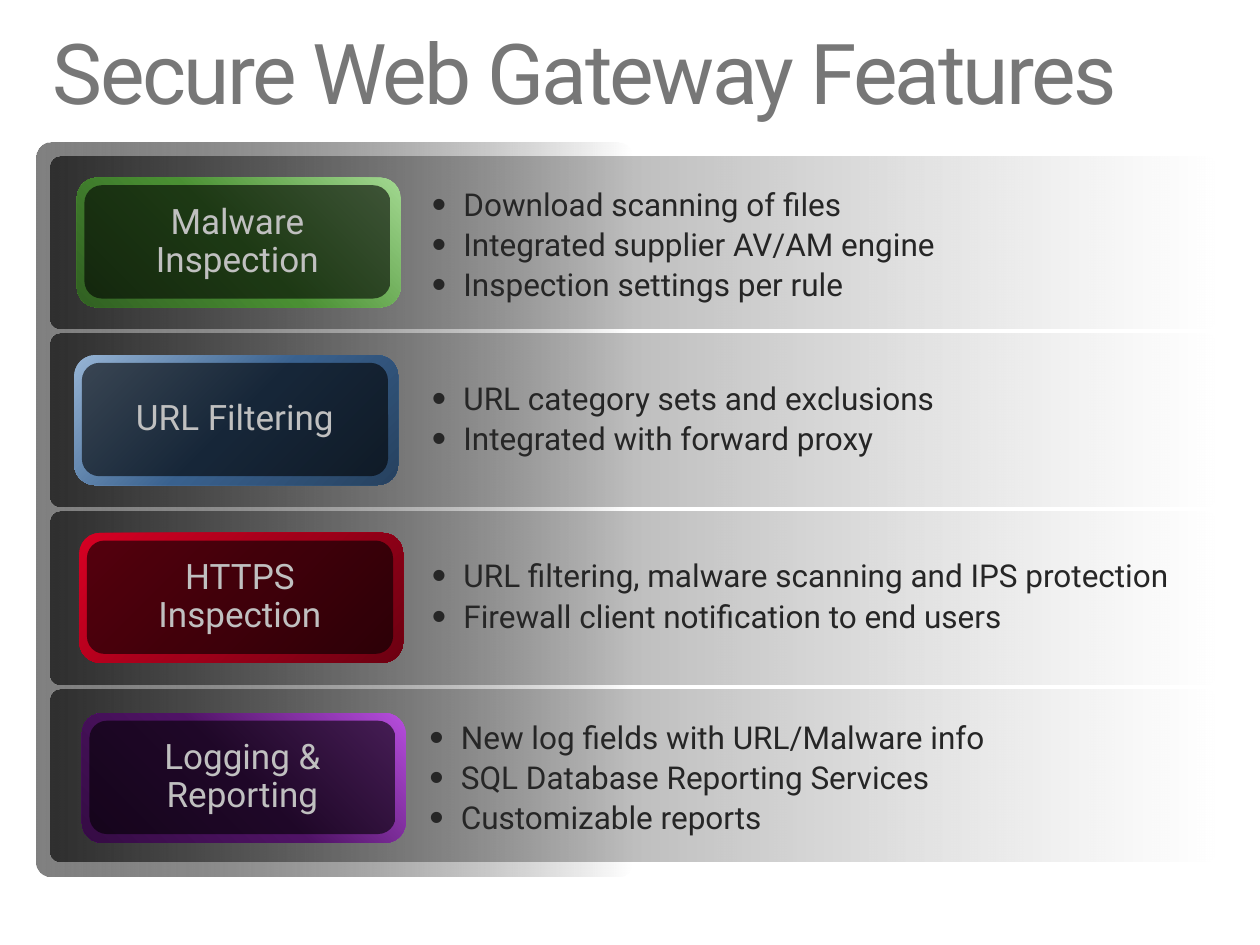
from dataclasses import dataclass

from pptx import Presentation
from pptx.dml.color import RGBColor
from pptx.enum.shapes import MSO_SHAPE
from pptx.enum.text import MSO_ANCHOR, MSO_AUTO_SIZE, PP_ALIGN
from pptx.oxml import parse_xml
from pptx.oxml.ns import nsdecls, qn
from pptx.util import Inches, Pt


@dataclass(frozen=True)
class Theme:
    font: str = "Roboto"
    title: str = "777777"
    label: str = "C0C0C0"
    body: str = "262626"
    title_size: int = 48
    label_size: int = 20
    body_size: int = 18
    backdrop: tuple = ((0, "808080", 100), (100, "000000", 0))
    band: tuple = ((0, "FFFFFF", 39), (100, "000000", 63))
    shade: tuple = ((0, "000000", 60), (100, "000000", 60))
    green: tuple = ("316022", "4A9033", "A2D890")
    blue: tuple = ("26415F", "39618E", "96B4D5")
    red: tuple = ("6C0011", "A1001A", "D70023")
    purple: tuple = ("350C44", "4F1365", "B74EDE")


LINEAR = '<a:lin ang="{}" scaled="0"/>'
RADIAL = '<a:path path="circle"><a:fillToRect {}/></a:path>'
BOTTOM_LEFT = RADIAL.format('t="100000" r="100000"')
BOTTOM_RIGHT = RADIAL.format('l="100000" t="100000"')


@dataclass(frozen=True)
class Feature:
    label: str
    colors: tuple
    focus: str
    tile_at: tuple
    list_at: tuple
    list_width: float
    points: tuple


class FeatureSlide:
    def __init__(self, prs, theme):
        self.theme = theme
        self.slide = prs.slides.add_slide(prs.slide_layouts[5])

    def style(self, p, size, color):
        p.line_spacing = 0.9
        for r in p.runs:
            r.font.name = self.theme.font
            r.font.size = Pt(size)
            r.font.color.rgb = RGBColor.from_string(color)

    def title(self, text):
        sp = self.slide.shapes.title
        sp.left, sp.top, sp.width, sp.height = map(Inches, (0.42, 0.25, 9.17, 0.73))
        tf = sp.text_frame
        tf.text = text
        tf.margin_left = tf.margin_right = tf.margin_top = tf.margin_bottom = 0
        tf.vertical_anchor = MSO_ANCHOR.TOP
        tf.auto_size = MSO_AUTO_SIZE.SHAPE_TO_FIT_TEXT
        p = tf.paragraphs[0]
        p.alignment = PP_ALIGN.LEFT
        self.style(p, self.theme.title_size, self.theme.title)
        p.runs[0].font._element.set("spc", "-150")

    def rounded(self, shapes, left, top, width, height, radius, stops, direction):
        """Add a rounded rectangle whose stops are (percent, colour, opacity)."""
        sp = shapes.add_shape(MSO_SHAPE.ROUNDED_RECTANGLE,
                              *map(Inches, (left, top, width, height)))
        sp.adjustments[0] = radius
        sp.shadow.inherit = False
        sp.line.fill.background()
        sp.fill.gradient()
        marks = "".join(
            f'<a:gs pos="{pos * 1000}"><a:srgbClr val="{color}">'
            f'<a:alpha val="{alpha * 1000}"/></a:srgbClr></a:gs>'
            for pos, color, alpha in stops)
        old = sp._element.spPr.find(qn("a:gradFill"))
        old.getparent().replace(old, parse_xml(
            f'<a:gradFill {nsdecls("a")} rotWithShape="1">'
            f'<a:gsLst>{marks}</a:gsLst>{direction}</a:gradFill>'))
        return sp

    def panel(self, shapes, left, top, width, height, radius, stops, angle):
        """Add a panel turned by 270 degrees; the box is as seen."""
        sp = self.rounded(shapes, left + (width - height) / 2,
                          top + (height - width) / 2, height, width,
                          radius, stops, LINEAR.format(angle * 60000))
        sp.rotation = 270

    def tile(self, shapes, feature):
        left, top = feature.tile_at
        stops = [(50 * i, color, 100) for i, color in enumerate(feature.colors)]
        self.rounded(shapes, left, top, 2.57, 1.03, 0.158, stops, feature.focus)
        sp = self.rounded(shapes, left + 0.06, top + 0.06, 2.43, 0.9, 0.155,
                          self.theme.shade, LINEAR.format(0))
        tf = sp.text_frame
        tf.text = feature.label
        tf.word_wrap = True
        tf.vertical_anchor = MSO_ANCHOR.MIDDLE
        p = tf.paragraphs[0]
        p.alignment = PP_ALIGN.CENTER
        self.style(p, self.theme.label_size, self.theme.label)

    def bullets(self, shapes, feature):
        height = 0.05 + 0.33 * len(feature.points)
        sp = shapes.add_textbox(*map(Inches, (*feature.list_at,
                                              feature.list_width, height)))
        tf = sp.text_frame
        tf.text = "\n".join(feature.points)
        tf.word_wrap = True
        tf.auto_size = MSO_AUTO_SIZE.SHAPE_TO_FIT_TEXT
        for i, p in enumerate(tf.paragraphs):
            pPr = p._p.get_or_add_pPr()
            pPr.set("marL", str(Inches(0.25)))
            pPr.set("indent", str(-Inches(0.25)))
            for bullet in ('buSzPct val="130000"', 'buFont typeface="Arial"',
                           'buChar char="•"'):
                tag, attribute = bullet.split()
                pPr.append(parse_xml(f'<a:{tag} {nsdecls("a")} {attribute}/>'))
            self.style(p, self.theme.body_size, self.theme.body)
            if i:
                p.space_before = Pt(3.6)

    def backdrop(self):
        self.panel(self.slide.shapes, 0.29, 1.13, 4.73, 5.83, 0.024,
                   self.theme.backdrop, 90)

    def feature(self, row, feature):
        shapes = self.slide.shapes.add_group_shape().shapes
        self.panel(shapes, 0.4, 1.24 + 1.41 * row, 9.24, 1.37, 0.053,
                   self.theme.band, 270)
        self.tile(shapes, feature)
        self.bullets(shapes, feature)


def main():
    prs = Presentation()
    prs.slide_width, prs.slide_height = Inches(10), Inches(7.5)
    theme = Theme()
    features = (
        Feature("Malware Inspection", theme.green, BOTTOM_LEFT,
                (0.61, 1.41), (3.33, 1.45), 5,
                ("Download scanning of files",
                 "Integrated supplier AV/AM engine",
                 "Inspection settings per rule")),
        Feature("URL Filtering", theme.blue, BOTTOM_RIGHT,
                (0.59, 2.82), (3.33, 2.99), 5,
                ("URL category sets and exclusions",
                 "Integrated with forward proxy")),
        Feature("HTTPS Inspection", theme.red, BOTTOM_RIGHT,
                (0.63, 4.23), (3.33, 4.4), 6.09,
                ("URL filtering, malware scanning and IPS protection",
                 "Firewall client notification to end users")),
        Feature("Logging & Reporting", theme.purple, BOTTOM_LEFT,
                (0.65, 5.66), (3.31, 5.68), 5,
                ("New log fields with URL/Malware info",
                 "SQL Database Reporting Services",
                 "Customizable reports")),
    )
    s = FeatureSlide(prs, theme)
    s.backdrop()
    s.title("Secure Web Gateway Features")
    for row, feature in enumerate(features):
        s.feature(row, feature)
    prs.save("out.pptx")


if __name__ == "__main__":
    main()
